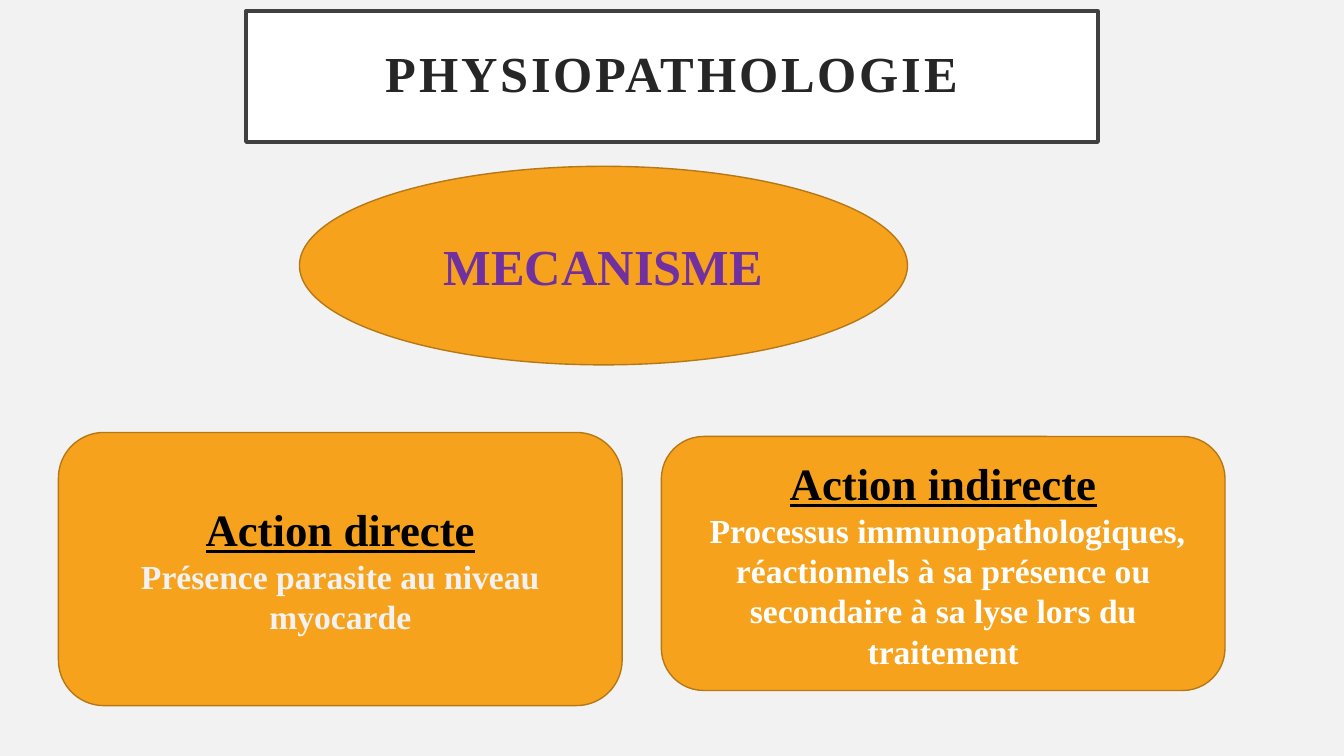
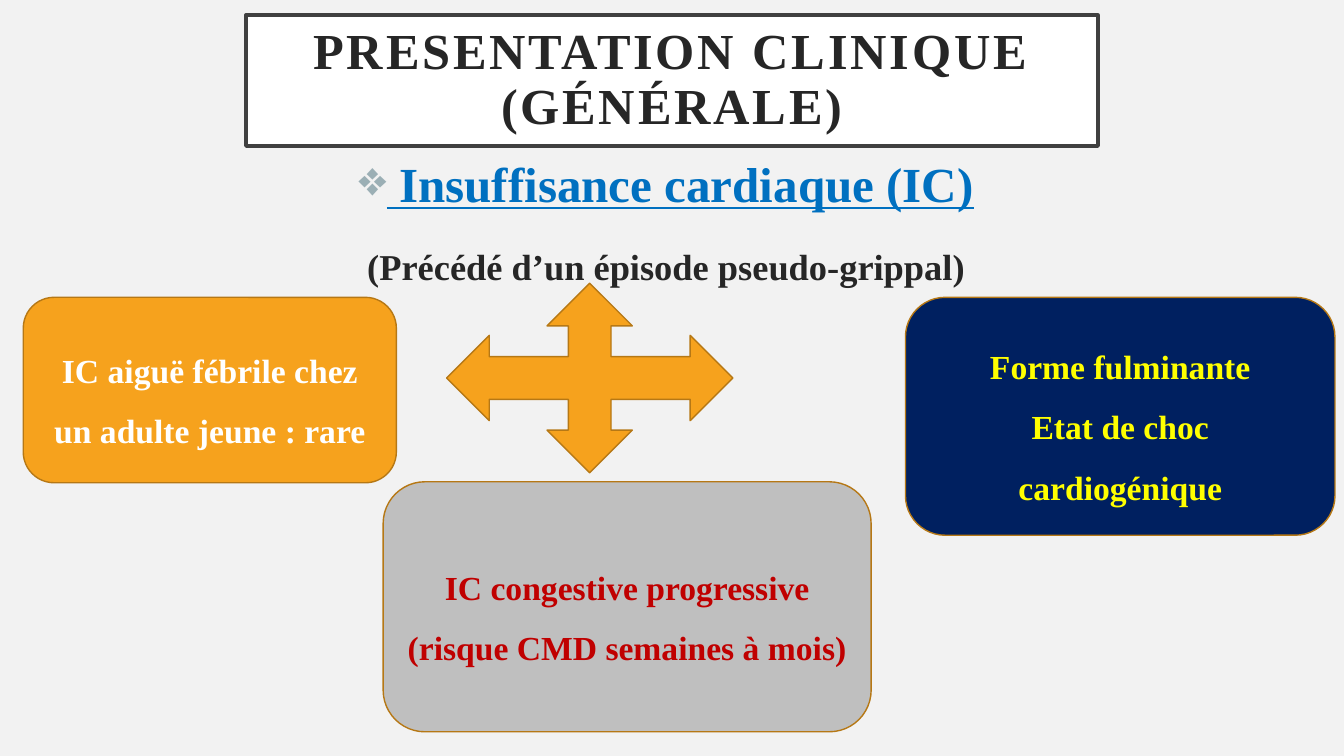
from lxml import etree
from pptx import Presentation
from pptx.dml.color import RGBColor
from pptx.enum.shapes import MSO_SHAPE
from pptx.enum.text import MSO_ANCHOR, PP_ALIGN
from pptx.oxml.ns import qn
from pptx.util import Inches, Pt

RECTANGLE = MSO_SHAPE.RECTANGLE
ROUNDED = MSO_SHAPE.ROUNDED_RECTANGLE
ELLIPSE = MSO_SHAPE.OVAL
QUAD_ARROW = MSO_SHAPE.QUAD_ARROW
MIDDLE = MSO_ANCHOR.MIDDLE
CENTER = PP_ALIGN.CENTER

SLIDE_WIDTH, SLIDE_HEIGHT = Inches(13.33), Inches(7.5)
FONT = "Times New Roman"
COLORS = {
    "background": "F2F2F2", "white": "FFFFFF", "black": "000000",
    "ink": "262626", "frame": "404040", "orange": "F6A21D",
    "brown": "B67815", "purple": "7030A0", "blue": "0070C0",
    "navy": "002060", "yellow": "FFFF00", "gray": "BFBFBF",
    "red": "C00000", "bullet": "9BAFB5",
}


def color(name):
    return RGBColor.from_string(COLORS[name])


def place(left, top, width, height):
    """Turn percentages of the slide's size into lengths."""
    return (int(SLIDE_WIDTH * left / 100), int(SLIDE_HEIGHT * top / 100),
            int(SLIDE_WIDTH * width / 100), int(SLIDE_HEIGHT * height / 100))


def add_slide(presentation):
    slide = presentation.slides.add_slide(presentation.slide_layouts[6])
    slide.background.fill.solid()
    slide.background.fill.fore_color.rgb = color("background")
    return slide


# Text: each line is (text, size, colour, underlined)
def write(text_frame, lines, spacing=1.0):
    text_frame.word_wrap = True
    text_frame.text = "\n".join(line[0] for line in lines)
    for paragraph, (_, size, ink, underlined) in zip(text_frame.paragraphs, lines):
        paragraph.alignment = CENTER
        paragraph.line_spacing = spacing
        font = paragraph.runs[0].font
        font.name, font.size, font.bold = FONT, Pt(size), True
        font.underline = underlined
        font.color.rgb = color(ink)


def add_bullet(paragraph, character):
    properties = paragraph._p.get_or_add_pPr()
    properties.set("marL", str(Inches(0.25)))
    properties.set("indent", str(-Inches(0.25)))
    bullet_color = etree.SubElement(properties, qn("a:buClr"))
    etree.SubElement(bullet_color, qn("a:srgbClr"), val=COLORS["bullet"])
    etree.SubElement(properties, qn("a:buChar"), char=character)


# Shapes
def add_panel(slide, kind, area, lines=(), fill="orange", line="brown",
              line_width=1, spacing=1.0):
    shape = slide.shapes.add_shape(kind, *place(*area))
    shape.shadow.inherit = False
    shape.fill.solid()
    shape.fill.fore_color.rgb = color(fill)
    shape.line.color.rgb = color(line)
    shape.line.width = Pt(line_width)
    if lines:
        shape.text_frame.vertical_anchor = MIDDLE
        write(shape.text_frame, lines, spacing)
    return shape


def add_title(slide, text, top):
    shape = add_panel(slide, RECTANGLE, (18.3, top, 63.4, 17.33),
                      [(text, 36, "ink", False)], "white", "frame", 2.5, 0.9)
    frame = shape.text_frame
    frame.margin_left = frame.margin_right = Inches(0.2)
    frame.margin_top = frame.margin_bottom = Inches(0.2)
    frame.paragraphs[0].runs[0].font._element.set("spc", "200")


def add_heading(slide, area, lines):
    frame = slide.shapes.add_textbox(*place(*area)).text_frame
    write(frame, lines)
    for paragraph, spacing in zip(frame.paragraphs, (0.9, 1.4)):
        paragraph.line_spacing = spacing
        paragraph.space_before = Pt(10)
    add_bullet(frame.paragraphs[0], "❖")


# Slides
def build_mechanism(presentation):
    slide = add_slide(presentation)
    add_title(slide, "PHYSIOPATHOLOGIE", 1.47)
    add_panel(slide, ELLIPSE, (22.28, 22, 45.24, 26.27),
              [("MECANISME", 36, "purple", False)])
    actions = [
        ((4.35, 57.2, 41.94, 36.13), "Action directe",
         "Présence parasite au niveau myocarde", "background"),
        ((49.21, 57.73, 41.94, 33.6), "Action indirecte",
         " Processus immunopathologiques, réactionnels à sa présence ou "
         "secondaire à sa lyse lors du traitement", "white"),
    ]
    for area, heading, detail, ink in actions:
        add_panel(slide, ROUNDED, area,
                  [(heading, 32, "black", True), (detail, 24, ink, False)])


def build_presentation_clinique(presentation):
    slide = add_slide(presentation)
    add_title(slide, "PRESENTATION CLINIQUE (GÉNÉRALE)", 2)
    add_heading(slide, (2.48, 20.53, 94.22, 17.33), [
        (" Insuffisance cardiaque (IC)", 35, "blue", True),
        ("(Précédé d’un épisode pseudo-grippal)", 26, "ink", False),
    ])
    add_panel(slide, QUAD_ARROW, (33.23, 37.47, 21.3, 25.07))
    forms = [
        ((1.73, 39.33, 27.76, 24.53), "orange", "white",
         ["IC aiguë fébrile chez un adulte jeune : rare"]),
        ((28.51, 63.73, 36.31, 33.07), "gray", "red",
         ["IC congestive progressive (risque CMD semaines à mois)"]),
        ((67.37, 39.33, 31.96, 31.47), "navy", "yellow",
         ["Forme fulminante", "Etat de choc cardiogénique"]),
    ]
    for area, fill, ink, texts in forms:
        add_panel(slide, ROUNDED, area,
                  [(text, 24, ink, False) for text in texts], fill, spacing=1.5)


def main():
    presentation = Presentation()
    presentation.slide_width = SLIDE_WIDTH
    presentation.slide_height = SLIDE_HEIGHT
    build_mechanism(presentation)
    build_presentation_clinique(presentation)
    presentation.save("out.pptx")


if __name__ == "__main__":
    main()
